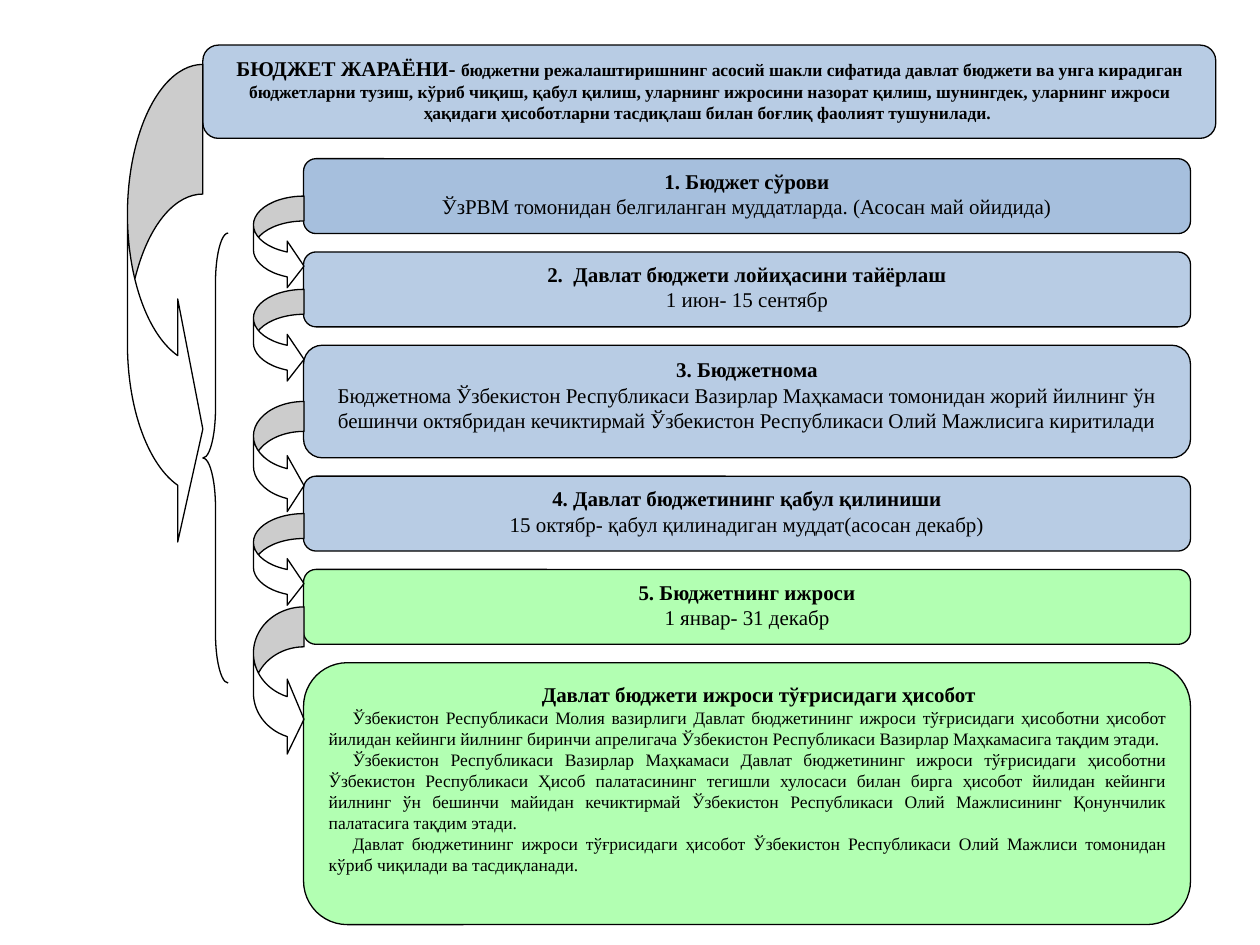
from dataclasses import dataclass

from lxml.etree import SubElement
from pptx import Presentation
from pptx.dml.color import RGBColor
from pptx.enum.shapes import MSO_SHAPE
from pptx.enum.text import MSO_ANCHOR, PP_ALIGN
from pptx.oxml.ns import qn
from pptx.util import Cm, Pt

COLOURS = {"blue": "4F81BD", "green": "00FF00", "white": "FFFFFF", "black": "000000"}
FONT = "Times New Roman"
STEP_LEFT, STEP_WIDTH, STEP_TOP, STEP_GAP = 6.12, 17.88, 3.2, 0.37
ARROW_LEFT, ARROW_WIDTH = 5.11, 1.02


@dataclass
class Span:
    text: str
    size: int = 12
    bold: bool = False


@dataclass
class Line:
    spans: list[Span]
    align: PP_ALIGN = PP_ALIGN.CENTER
    indent: float = 0


@dataclass
class Step:
    height: float
    colour: str
    opacity: int
    lines: list[Line]
    arrow_height: float = 0


def step_lines(title: str, detail: str) -> list[Line]:
    return [Line([Span(title, bold=True)]), Line([Span(detail)])]


HEADING = [Line([
    Span("БЮДЖЕТ ЖАРАЁНИ- ", bold=True),
    Span("бюджетни режалаштиришнинг асосий шакли сифатида давлат бюджети ва унга кирадиган "
         "бюджетларни тузиш, кўриб чиқиш, қабул қилиш, уларнинг ижросини назорат қилиш, "
         "шунингдек, уларнинг ижроси ҳақидаги ҳисоботларни тасдиқлаш билан боғлиқ фаолият "
         "тушунилади. ", 10, True),
])]

REPORT_TEXTS = [
    "Ўзбекистон Республикаси Молия вазирлиги Давлат бюджетининг ижроси тўғрисидаги ҳисоботни "
    "ҳисобот йилидан кейинги йилнинг биринчи апрелигача Ўзбекистон Республикаси Вазирлар "
    "Маҳкамасига тақдим этади. ",
    "Ўзбекистон Республикаси Вазирлар Маҳкамаси Давлат бюджетининг ижроси тўғрисидаги "
    "ҳисоботни Ўзбекистон Республикаси Ҳисоб палатасининг тегишли хулосаси билан бирга ҳисобот "
    "йилидан кейинги йилнинг ўн бешинчи майидан кечиктирмай Ўзбекистон Республикаси Олий "
    "Мажлисининг Қонунчилик палатасига тақдим этади. ",
    "Давлат бюджетининг ижроси тўғрисидаги ҳисобот Ўзбекистон Республикаси Олий Мажлиси "
    "томонидан кўриб чиқилади ва тасдиқланади.",
]
REPORT = [Line([Span("Давлат бюджети ижроси тўғрисидаги ҳисобот", bold=True)], indent=0.48)] + [
    Line([Span(text, 10)], PP_ALIGN.JUSTIFY, 0.48) for text in REPORT_TEXTS
]

STEPS = [
    Step(1.51, "blue", 50, step_lines(
        "1. Бюджет сўрови",
        "ЎзРВМ томонидан белгиланган муддатларда. (Асосан май ойидида)"), 1.88),
    Step(1.51, "blue", 40, step_lines(
        "2.  Давлат бюджети лойиҳасини тайёрлаш", "1 июн- 15 сентябр"), 1.88),
    Step(2.27, "blue", 40, step_lines(
        "3. Бюджетнома",
        "Бюджетнома Ўзбекистон Республикаси Вазирлар Маҳкамаси томонидан жорий йилнинг ўн "
        "бешинчи октябридан кечиктирмай Ўзбекистон Республикаси Олий Мажлисига киритилади"), 2.26),
    Step(1.51, "blue", 40, step_lines(
        "4. Давлат бюджетининг қабул қилиниши",
        "15 октябр- қабул қилинадиган муддат(асосан декабр)"), 1.88),
    Step(1.51, "green", 30, step_lines("5. Бюджетнинг ижроси", "1 январ- 31 декабр"), 3.02),
    Step(5.28, "green", 30, REPORT),
]


def apply_format(target, values: dict) -> None:
    for name, value in values.items():
        setattr(target, name, value)


def colour_of(name: str) -> RGBColor:
    return RGBColor.from_string(COLOURS[name])


def add_outlined(page, kind: MSO_SHAPE, left: float, top: float, width: float, height: float):
    shape = page.shapes.add_shape(kind, Cm(left), Cm(top), Cm(width), Cm(height))
    shape.shadow.inherit = False
    shape.line.color.rgb = colour_of("black")
    shape.line.width = Pt(0.75)
    return shape


def fill_shape(shape, colour: str, opacity: int = 100) -> None:
    shape.fill.solid()
    shape.fill.fore_color.rgb = colour_of(colour)
    if opacity < 100:
        tint = shape.fill._xPr.find(qn("a:solidFill")).find(qn("a:srgbClr"))
        SubElement(tint, qn("a:alpha"), val=str(opacity * 1000))


def write_lines(frame, lines: list[Line]) -> None:
    apply_format(frame, {"word_wrap": True, "vertical_anchor": MSO_ANCHOR.TOP})
    for index, line in enumerate(lines):
        para = frame.add_paragraph() if index else frame.paragraphs[0]
        para.alignment = line.align
        if line.indent:
            para._p.get_or_add_pPr().set("indent", str(Cm(line.indent)))
        for span in line.spans:
            piece = para.add_run()
            piece.text = span.text
            apply_format(piece.font, {"name": FONT, "size": Pt(span.size), "bold": span.bold})
            piece.font.color.rgb = colour_of("black")


def add_box(page, left: float, top: float, width: float, step: Step) -> None:
    box = add_outlined(page, MSO_SHAPE.ROUNDED_RECTANGLE, left, top, width, step.height)
    fill_shape(box, step.colour, step.opacity)
    write_lines(box.text_frame, step.lines)


def add_arrow(page, left: float, top: float, width: float, height: float) -> None:
    arrow = add_outlined(page, MSO_SHAPE.CURVED_RIGHT_ARROW, left, top, width, height)
    fill_shape(arrow, "white")
    thickness = 4 / 15 * height / width
    for index, value in enumerate((thickness, 2 * thickness, 1 / 3)):
        arrow.adjustments[index] = value


def add_brace(page, left: float, top: float, width: float, height: float) -> None:
    brace = add_outlined(page, MSO_SHAPE.LEFT_BRACE, left, top, width, height)
    brace.fill.background()
    brace.adjustments[0] = 1.96


def main() -> None:
    deck = Presentation()
    apply_format(deck, {"slide_width": Cm(25.4), "slide_height": Cm(19.05)})
    page = deck.slides.add_slide(deck.slide_layouts[6])

    top = STEP_TOP
    for step in STEPS:
        add_box(page, STEP_LEFT, top, STEP_WIDTH, step)
        if step.arrow_height:
            add_arrow(page, ARROW_LEFT, top + step.height / 2, ARROW_WIDTH, step.arrow_height)
        top += step.height + STEP_GAP

    add_box(page, 4.09, 0.91, 20.42, Step(1.88, "blue", 40, HEADING))
    add_brace(page, 4.09, 4.7, 0.51, 9.07)
    add_arrow(page, 2.57, 1.3, 1.52, 9.8)
    deck.save("out.pptx")


if __name__ == "__main__":
    main()
